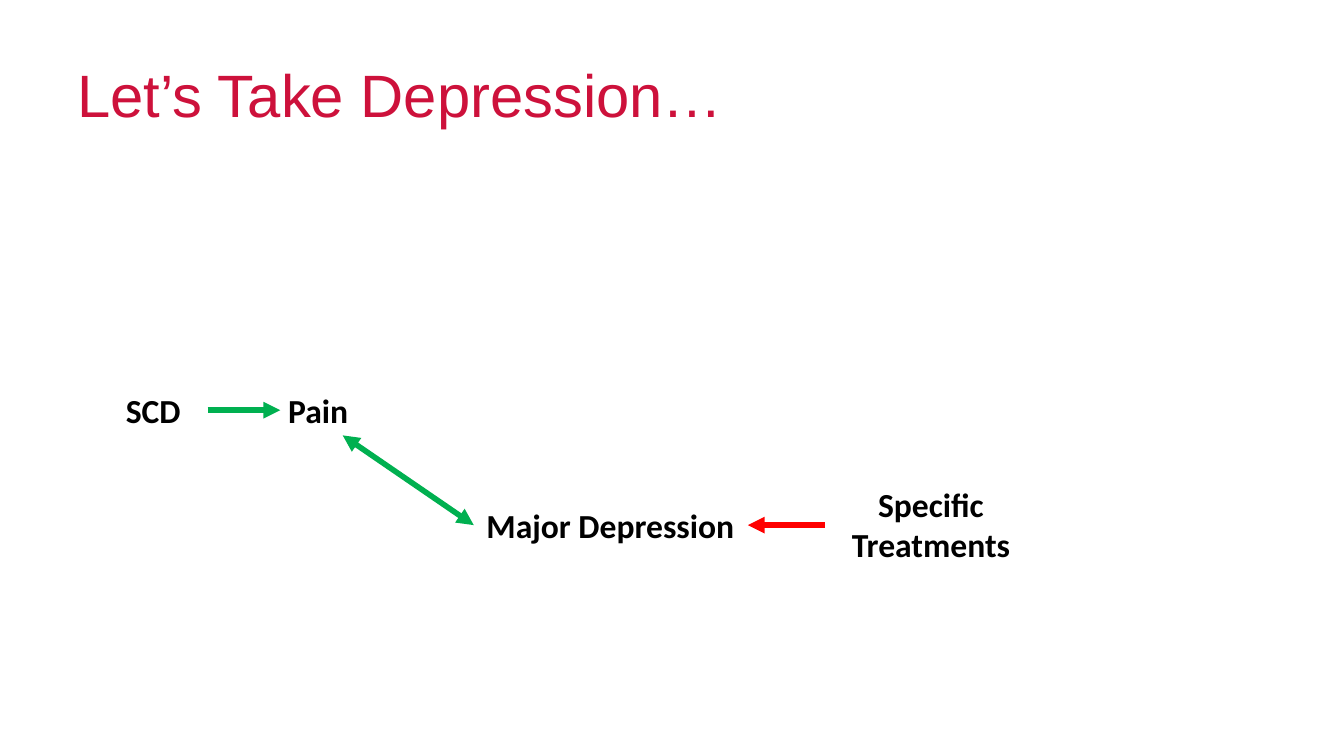
from lxml import etree
from pptx import Presentation
from pptx.dml.color import RGBColor
from pptx.enum import shapes, text
from pptx.oxml import ns
from pptx.util import Pt

CRIMSON = RGBColor(0xCD, 0x11, 0x3B)
BLACK = RGBColor(0, 0, 0)
GREEN = RGBColor(0, 0xB0, 0x50)
RED = RGBColor(0xFF, 0, 0)


def add_run(paragraph, wording, font_name, size, color, bold=False):
    run = paragraph.add_run()
    run.text = wording
    run.font.name = font_name
    run.font.size = Pt(size)
    run.font.bold = bold
    run.font.color.rgb = color


def build_title(slide, left, top, width, height):
    title = slide.shapes.title
    title.left, title.top, title.width, title.height = map(Pt, (left, top, width, height))
    frame = title.text_frame
    frame.auto_size = text.MSO_AUTO_SIZE.NONE
    frame.vertical_anchor = text.MSO_ANCHOR.MIDDLE
    paragraph = frame.paragraphs[0]
    paragraph.alignment = text.PP_ALIGN.LEFT
    add_run(paragraph, "Let’s Take Depression…", "Arial", 42.7, CRIMSON)


def add_label(slide, lines, left, top, width, height, alignment, wrap=False):
    shape = slide.shapes.add_textbox(Pt(left), Pt(top), Pt(width), Pt(height))
    frame = shape.text_frame
    frame.word_wrap = wrap
    frame.auto_size = text.MSO_AUTO_SIZE.SHAPE_TO_FIT_TEXT
    for index, line in enumerate(lines):
        paragraph = frame.add_paragraph() if index else frame.paragraphs[0]
        paragraph.alignment = alignment
        add_run(paragraph, line, "Calibri", 24, BLACK, bold=True)


def add_arrow(slide, start_x, start_y, end_x, end_y, color, ends):
    arrow = slide.shapes.add_connector(
        shapes.MSO_CONNECTOR.STRAIGHT, Pt(start_x), Pt(start_y), Pt(end_x), Pt(end_y))
    arrow.line.color.rgb = color
    arrow.line.width = Pt(4)
    properties = arrow._element.spPr
    line = properties.find(ns.qn("a:ln"))
    for end in ends:
        etree.SubElement(line, ns.qn(end), type="triangle")
    etree.SubElement(properties, ns.qn("a:effectLst"))


def build_pathway(slide, left, top, width, height):
    pain_row = top + 18
    depression_row = top + height - 33
    depression_left = left + 255.6
    depression_right = depression_left + 195.1
    treatments_left = left + width - 151.9
    start, center = text.PP_ALIGN.LEFT, text.PP_ALIGN.CENTER

    add_label(slide, ["SCD"], left, top, 54, 36, start)
    add_label(slide, ["Pain"], left + 115.9, top, 57.6, 36, start)
    add_label(slide, ["Major Depression"], depression_left, depression_row - 18, 195.1, 36, center)
    add_label(slide, ["Specific", "Treatments"], treatments_left, depression_row - 33,
              151.9, 65.5, center, wrap=True)

    add_arrow(slide, left + 65.5, pain_row, left + 117.4, pain_row, GREEN, ["a:tailEnd"])
    add_arrow(slide, left + 162, top + 36, depression_left, depression_row, GREEN,
              ["a:headEnd", "a:tailEnd"])
    add_arrow(slide, treatments_left, depression_row, depression_right + 0.7, depression_row,
              RED, ["a:tailEnd"])


def main():
    presentation = Presentation()
    presentation.slide_width = Pt(960)
    presentation.slide_height = Pt(540)
    slide = presentation.slides.add_slide(presentation.slide_layouts[5])
    build_title(slide, 48, 39, 864, 56)
    build_pathway(slide, 82.8, 275, 658.1, 133.1)
    presentation.save("out.pptx")


if __name__ == "__main__":
    main()
